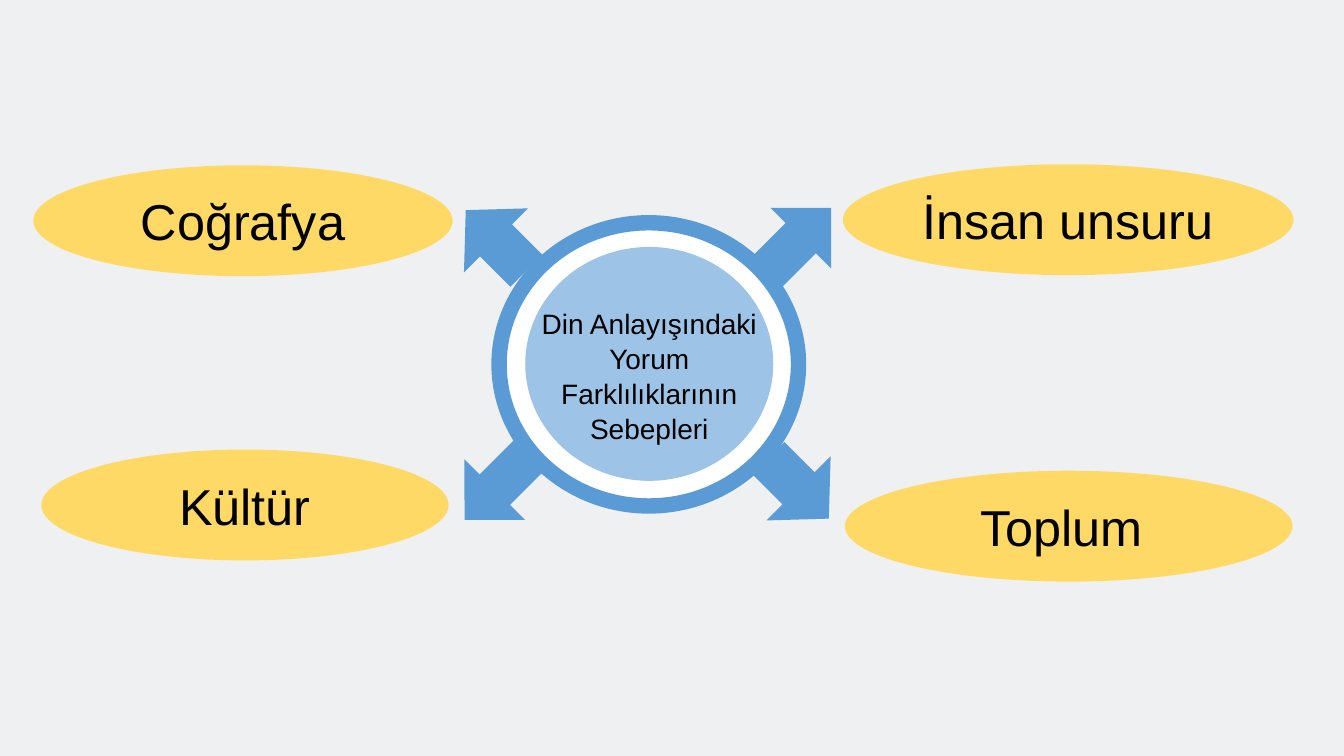
import pptx
import pptx.dml.color
import pptx.enum.shapes
import pptx.enum.text
import pptx.util

Inches = pptx.util.Inches
Pt = pptx.util.Pt
RGBColor = pptx.dml.color.RGBColor
MSO_SHAPE = pptx.enum.shapes.MSO_SHAPE

BACKGROUND = RGBColor(0xEE, 0xF0, 0xF2)
YELLOW = RGBColor(0xFF, 0xD9, 0x66)
BLUE = RGBColor(0x5B, 0x9B, 0xD5)
LIGHT_BLUE = RGBColor(0x9D, 0xC3, 0xE6)
WHITE = RGBColor(0xFF, 0xFF, 0xFF)
BLACK = RGBColor(0, 0, 0)
FONT = "Arial"

TOPIC = "Din Anlayışındaki Yorum Farklılıklarının Sebepleri"
TOPIC_BOX = (5.19, 3, 2.5, 1.45)
RING = (4.95, 2.21, 2.97, 2.81)
DISC = (5.21, 2.45, 2.46, 2.32)

CAUSE_HEIGHT = 1.1
CAUSES = [  # text, left, top, width
    ("Coğrafya", 0.33, 1.64, 4.16),
    ("Kültür", 0.41, 4.46, 4.04),
    ("İnsan unsuru", 8.36, 1.63, 4.47),
    ("Toplum ", 8.38, 4.67, 4.44),
]
ARROWS = [  # left, top, width, height, rotation
    (7.5, 1.93, 0.85, 0.9, 45),
    (7.47, 4.42, 0.9, 0.85, 135),
    (4.5, 4.39, 0.85, 0.9, 225),
    (4.47, 1.96, 0.9, 0.85, 315),
]


def add_filled_shape(slide, kind, box, color):
    shape = slide.shapes.add_shape(kind, *map(Inches, box))
    shape.shadow.inherit = False
    shape.fill.solid()
    shape.fill.fore_color.rgb = color
    shape.line.fill.background()
    return shape


def write_centered(shape, text, size):
    frame = shape.text_frame
    frame.word_wrap = True
    frame.vertical_anchor = pptx.enum.text.MSO_ANCHOR.MIDDLE
    paragraph = frame.paragraphs[0]
    paragraph.text = text
    paragraph.alignment = pptx.enum.text.PP_ALIGN.CENTER
    paragraph.font.name = FONT
    paragraph.font.size = Pt(size)
    paragraph.font.color.rgb = BLACK
    return paragraph


def main():
    presentation = pptx.Presentation()
    presentation.slide_width = Inches(13.33)
    presentation.slide_height = Inches(7.5)
    slide = presentation.slides.add_slide(presentation.slide_layouts[6])
    slide.background.fill.solid()
    slide.background.fill.fore_color.rgb = BACKGROUND

    ring = add_filled_shape(slide, MSO_SHAPE.OVAL, RING, WHITE)
    ring.line.color.rgb = BLUE
    ring.line.width = Pt(11)
    add_filled_shape(slide, MSO_SHAPE.OVAL, DISC, LIGHT_BLUE)

    for *box, rotation in ARROWS:
        arrow = add_filled_shape(slide, MSO_SHAPE.UP_ARROW, box, BLUE)
        arrow.rotation = rotation

    for text, left, top, width in CAUSES:
        box = (left, top, width, CAUSE_HEIGHT)
        cause = add_filled_shape(slide, MSO_SHAPE.OVAL, box, YELLOW)
        write_centered(cause, text, 36)

    topic = slide.shapes.add_textbox(*map(Inches, TOPIC_BOX))
    write_centered(topic, TOPIC, 20).line_spacing = 1.04
    topic.text_frame.auto_size = pptx.enum.text.MSO_AUTO_SIZE.SHAPE_TO_FIT_TEXT

    presentation.save("out.pptx")


if __name__ == "__main__":
    main()
